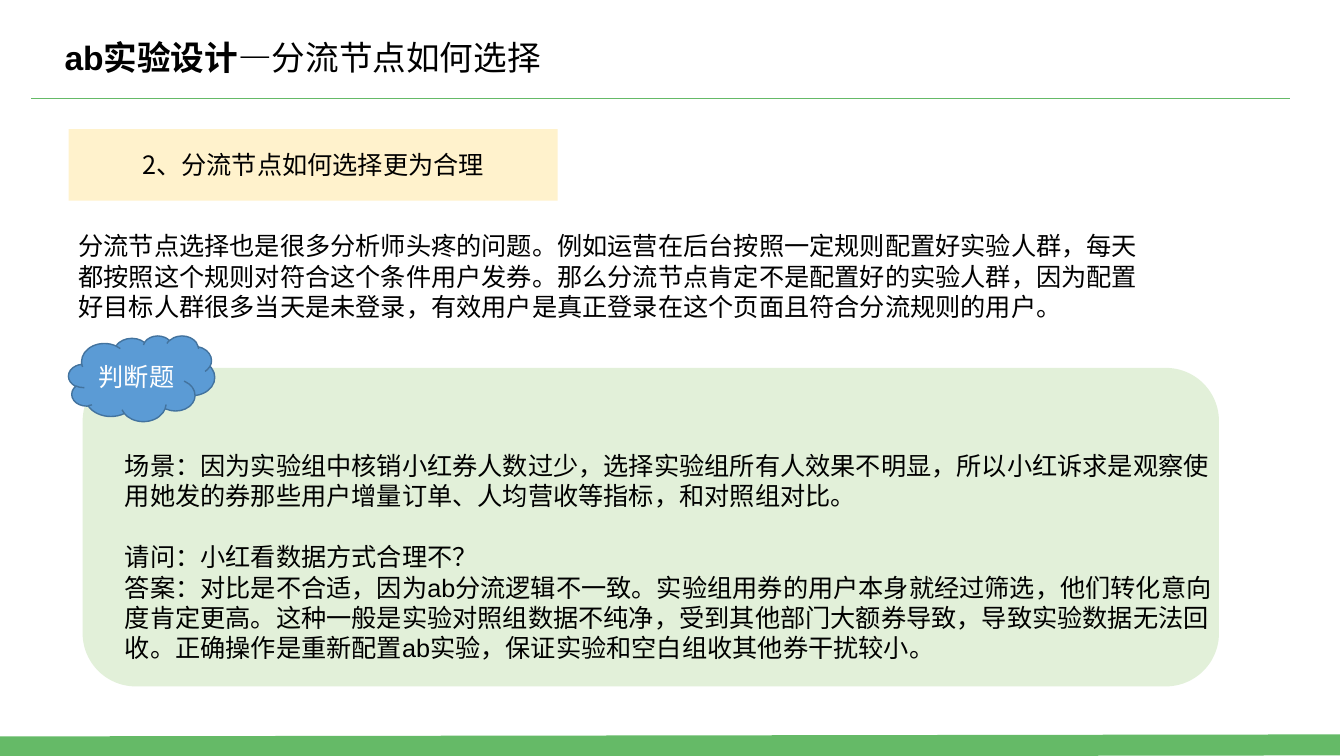
from lxml import etree
from pptx import Presentation
from pptx.dml.color import RGBColor
from pptx.enum.shapes import MSO_CONNECTOR, MSO_SHAPE
from pptx.enum.text import MSO_ANCHOR, MSO_AUTO_SIZE, PP_ALIGN
from pptx.oxml.ns import qn
from pptx.util import Pt

STRAIGHT = MSO_CONNECTOR.STRAIGHT
RECTANGLE, ROUNDED, CLOUD = MSO_SHAPE.RECTANGLE, MSO_SHAPE.ROUNDED_RECTANGLE, MSO_SHAPE.CLOUD
TOP, MIDDLE = MSO_ANCHOR.TOP, MSO_ANCHOR.MIDDLE
LEFT, CENTER = PP_ALIGN.LEFT, PP_ALIGN.CENTER
NO_AUTOFIT = MSO_AUTO_SIZE.NONE

EMU_PER_PX = 9144  # 100 px to the inch
TITLE_ONLY = 5
BLACK = RGBColor(0x00, 0x00, 0x00)
WHITE = RGBColor(0xFF, 0xFF, 0xFF)
GREEN = RGBColor(0x65, 0xBA, 0x67)
PALE_GREEN = RGBColor(0xE2, 0xF0, 0xD9)
CREAM = RGBColor(0xFF, 0xF2, 0xCC)
BLUE = RGBColor(0x5B, 0x9B, 0xD5)
DARK_BLUE = RGBColor(0x43, 0x73, 0x9E)

INTRO = "分流节点选择也是很多分析师头疼的问题。例如运营在后台按照一定规则配置好实验人群，每天都按照这个规则对符合这个条件用户发券。那么分流节点肯定不是配置好的实验人群，因为配置好目标人群很多当天是未登录，有效用户是真正登录在这个页面且符合分流规则的用户。"
SCENARIO = "场景：因为实验组中核销小红券人数过少，选择实验组所有人效果不明显，所以小红诉求是观察使用她发的券那些用户增量订单、人均营收等指标，和对照组对比。"
QUESTION = "请问：小红看数据方式合理不？"
ANSWER = "答案：对比是不合适，因为ab分流逻辑不一致。实验组用券的用户本身就经过筛选，他们转化意向度肯定更高。这种一般是实验对照组数据不纯净，受到其他部门大额券导致，导致实验数据无法回收。正确操作是重新配置ab实验，保证实验和空白组收其他券干扰较小。"


def px(*lengths):
    return [length * EMU_PER_PX for length in lengths]


class SlideBuilder:
    latin = "Arial"
    chinese = "Noto Sans CJK SC"
    body_size = Pt(18)
    title_size = Pt(24)

    def __init__(self, deck):
        self.slide = deck.slides.add_slide(deck.slide_layouts[TITLE_ONLY])

    def title(self, place, bold_part, plain_part):
        box = self.slide.shapes.title
        box.left, box.top, box.width, box.height = px(*place)
        frame = box.text_frame
        frame.word_wrap, frame.auto_size, frame.vertical_anchor = True, NO_AUTOFIT, TOP
        para = frame.paragraphs[0]
        para.alignment = LEFT
        para.font.size, para.font.color.rgb = self.title_size, BLACK
        for words, font, bold in ((bold_part, self.latin, True), (plain_part, self.chinese, False)):
            span = para.add_run()
            span.text = words
            span.font.name, span.font.bold = font, bold

    def fill_text(self, box, paragraphs, font, color, align, anchor):
        frame = box.text_frame
        frame.word_wrap, frame.vertical_anchor = True, anchor
        for index, (words, gap) in enumerate(paragraphs):
            para = frame.paragraphs[0] if index == 0 else frame.add_paragraph()
            para.text, para.alignment, para.space_before = words, align, Pt(gap)
            para.font.name, para.font.size = font, self.body_size
            para.font.color.rgb = color

    def text(self, place, *paragraphs):
        box = self.slide.shapes.add_textbox(*px(*place))
        self.fill_text(box, paragraphs, self.latin, BLACK, LEFT, TOP)

    def shape(self, kind, place, fill, outline=None, label=None, font=latin, color=BLACK):
        box = self.slide.shapes.add_shape(kind, *px(*place))
        box.shadow.inherit = False
        box.fill.solid()
        box.fill.fore_color.rgb = fill
        if outline is None:
            box.line.fill.background()
        else:
            box.line.color.rgb, box.line.width = outline, Pt(1)
        if label:
            self.fill_text(box, [(label, 0)], font, color, CENTER, MIDDLE)

    def line(self, ends, width):
        rule = self.slide.shapes.add_connector(STRAIGHT, *px(*ends))
        rule.line.color.rgb, rule.line.width = GREEN, Pt(width)
        etree.SubElement(rule._element.spPr, qn("a:effectLst"))


def main():
    deck = Presentation()
    deck.slide_width, deck.slide_height = px(1333, 750)
    page = SlideBuilder(deck)

    # Answer panel and green rules
    page.shape(ROUNDED, (82, 365, 1127, 316), PALE_GREEN)
    page.line((31, 98, 1279, 98), 1)
    page.line((0, 741, 1329, 739), 15)

    # Title and section heading
    page.title((54, 32, 964, 50), "ab实验设计—", "分流节点如何选择")
    page.shape(RECTANGLE, (68, 128, 485, 71), CREAM,
               label="2、分流节点如何选择更为合理", font=page.chinese)

    # Explanation, then the case with its question and answer
    page.text((114, 442, 1100, 222), (SCENARIO, 0), (QUESTION, 22), (ANSWER, 0))
    page.text((68, 224, 1083, 101), (INTRO, 0))

    # Cloud badge
    page.shape(CLOUD, (68, 333, 145, 85), BLUE, DARK_BLUE, "判断题", color=WHITE)

    deck.save("out.pptx")


if __name__ == "__main__":
    main()
